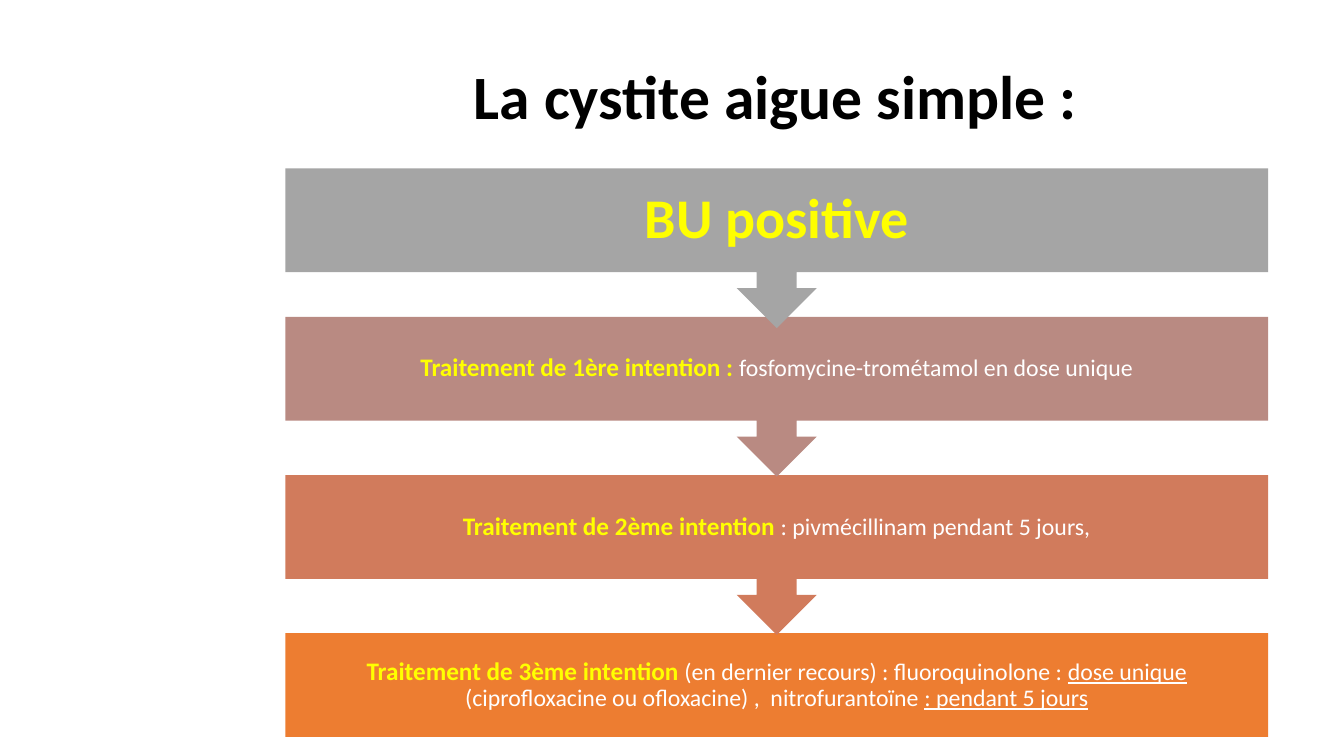
from dataclasses import dataclass

from pptx import Presentation
from pptx.dml.color import RGBColor
from pptx.enum.shapes import MSO_SHAPE
from pptx.enum.text import MSO_ANCHOR, MSO_AUTO_SIZE, PP_ALIGN
from pptx.slide import Slide
from pptx.text.text import TextFrame
from pptx.util import Pt


@dataclass(frozen=True)
class Theme:
    font: str = "Calibri"
    black: str = "000000"
    yellow: str = "FFFF00"
    white: str = "FFFFFF"
    title_size: float = 44
    heading_size: float = 40
    label_size: float = 18
    detail_size: float = 17
    line_spacing: float = 0.9


THEME = Theme()


@dataclass(frozen=True)
class Phrase:
    text: str
    size: float = THEME.detail_size
    color: str = THEME.white
    bold: bool = False
    underline: bool = False


@dataclass(frozen=True)
class Step:
    top: float
    fill: str
    phrases: tuple[Phrase, ...]
    inset: float = 10
    leads_on: bool = True


# Step geometry, in points
STEP_LEFT = 203.8
STEP_WIDTH = 702
BOX_HEIGHT = 74.2
CALLOUT_HEIGHT = 114.2


def label(text: str) -> Phrase:
    return Phrase(text, THEME.label_size, THEME.yellow, bold=True)


STEPS = (
    Step(120.2, "A5A5A5",
         (Phrase("BU positive", THEME.heading_size, THEME.yellow, bold=True),), inset=22.4),
    Step(226.3, "B98A82",
         (label("Traitement de 1ère intention : "),
          Phrase("fosfomycine-trométamol en dose unique"))),
    Step(339.3, "D17B5C",
         (label("Traitement de 2ème intention "),
          Phrase(": pivmécillinam pendant 5 jours,"))),
    Step(452.2, "ED7D31",
         (label("Traitement de 3ème intention "),
          Phrase("(en dernier recours) : fluoroquinolone : "),
          Phrase("dose unique ", underline=True),
          Phrase("(ciprofloxacine ou ofloxacine) ,  nitrofurantoïne "),
          Phrase(": pendant 5 jours", underline=True)), leads_on=False),
)


def write_phrases(text_frame: TextFrame, phrases: tuple[Phrase, ...]) -> None:
    text_frame.word_wrap = True
    text_frame.auto_size = MSO_AUTO_SIZE.NONE
    text_frame.vertical_anchor = MSO_ANCHOR.MIDDLE
    paragraph = text_frame.paragraphs[0]
    paragraph.alignment = PP_ALIGN.CENTER
    paragraph.line_spacing = THEME.line_spacing
    for phrase in phrases:
        run = paragraph.add_run()
        run.text = phrase.text
        run.font.name = THEME.font
        run.font.size = Pt(phrase.size)
        run.font.bold = phrase.bold
        run.font.underline = phrase.underline
        run.font.color.rgb = RGBColor.from_string(phrase.color)


def add_title(slide: Slide) -> None:
    title = slide.shapes.title
    title.left, title.top = Pt(208), Pt(20.9)
    title.width, title.height = Pt(702), Pt(100.8)
    write_phrases(title.text_frame, (
        Phrase("La cystite aigue simple : ", THEME.title_size, THEME.black, bold=True),))


def add_step(slide: Slide, step: Step) -> None:
    kind = MSO_SHAPE.DOWN_ARROW_CALLOUT if step.leads_on else MSO_SHAPE.RECTANGLE
    height = CALLOUT_HEIGHT if step.leads_on else BOX_HEIGHT
    shape = slide.shapes.add_shape(
        kind, Pt(STEP_LEFT), Pt(step.top), Pt(STEP_WIDTH), Pt(height))
    shape.shadow.inherit = False
    shape.fill.solid()
    shape.fill.fore_color.rgb = RGBColor.from_string(step.fill)
    shape.line.fill.background()
    if step.leads_on:
        shape.adjustments[3] = BOX_HEIGHT / CALLOUT_HEIGHT
    text_frame = shape.text_frame
    text_frame.margin_left = text_frame.margin_right = Pt(step.inset)
    text_frame.margin_top = text_frame.margin_bottom = Pt(step.inset)
    write_phrases(text_frame, step.phrases)


def main() -> None:
    presentation = Presentation()
    presentation.slide_width, presentation.slide_height = Pt(960), Pt(540)
    slide = presentation.slides.add_slide(presentation.slide_layouts[5])
    add_title(slide)
    # Last step first, so that each arrow lies over the next box
    for step in reversed(STEPS):
        add_step(slide, step)
    presentation.save("out.pptx")


if __name__ == "__main__":
    main()
